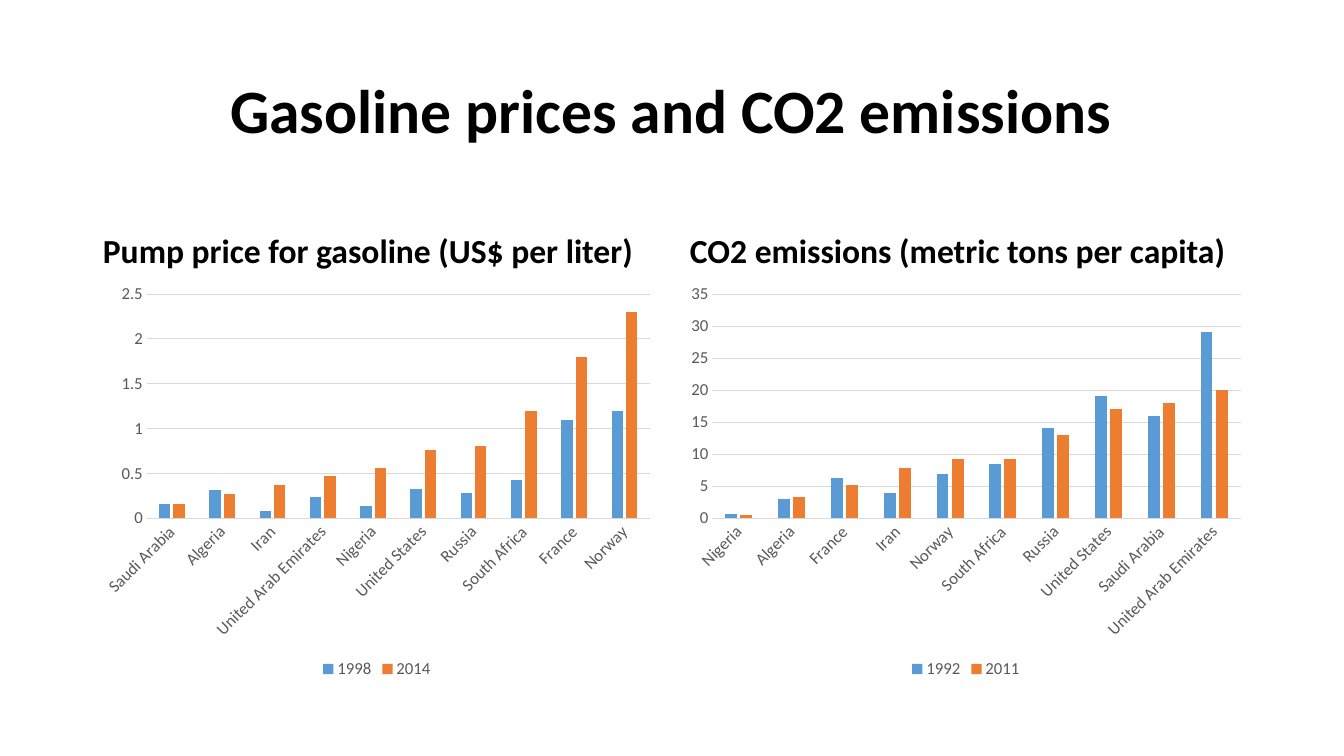
from pptx import Presentation
from pptx.chart.data import CategoryChartData
from pptx.dml.color import RGBColor
from pptx.enum.chart import XL_CHART_TYPE, XL_LEGEND_POSITION, XL_TICK_MARK
from pptx.enum.text import MSO_ANCHOR, PP_ALIGN
from pptx.oxml.ns import qn
from pptx.util import Emu, Pt

COLUMNS = XL_CHART_TYPE.COLUMN_CLUSTERED
LEGEND_BOTTOM = XL_LEGEND_POSITION.BOTTOM
NO_TICK = XL_TICK_MARK.NONE
MIDDLE, BOTTOM = MSO_ANCHOR.MIDDLE, MSO_ANCHOR.BOTTOM
LEFT, CENTER = PP_ALIGN.LEFT, PP_ALIGN.CENTER

FONT = "Calibri"
COLORS = {"text": "000000", "label": "595959", "grid": "D9D9D9",
          "earlier": "5B9BD5", "later": "ED7D31"}

TITLE = "Gasoline prices and CO2 emissions"
PANELS = [
    {
        "heading": "Pump price for gasoline (US$ per liter)",
        "left": 93, "width": 568, "years": ("1998", "2014"),
        "rows": [
            ("Saudi Arabia", 0.16, 0.16), ("Algeria", 0.31, 0.27),
            ("Iran", 0.08, 0.37), ("United Arab Emirates", 0.23, 0.47),
            ("Nigeria", 0.13, 0.56), ("United States", 0.32, 0.76),
            ("Russia", 0.28, 0.81), ("South Africa", 0.43, 1.2),
            ("France", 1.1, 1.8), ("Norway", 1.2, 2.3),
        ],
        "maximum": 2.5, "step": 0.5,
    },
    {
        "heading": "CO2 emissions (metric tons per capita)",
        "left": 680, "width": 572, "years": ("1992", "2011"),
        "rows": [
            ("Nigeria", 0.6, 0.5), ("Algeria", 3, 3.3),
            ("France", 6.2, 5.2), ("Iran", 3.9, 7.8),
            ("Norway", 6.9, 9.2), ("South Africa", 8.4, 9.3),
            ("Russia", 14, 13), ("United States", 19, 17),
            ("Saudi Arabia", 16, 18), ("United Arab Emirates", 29, 20),
        ],
        "maximum": 35, "step": 5,
    },
]

PAGE_SIZE = (1344, 756)
TITLE_AREA = (92, 41, 1159, 146)
HEADING_TOP, HEADING_HEIGHT = 185, 91
CHART_TOP, CHART_HEIGHT = HEADING_TOP + HEADING_HEIGHT, 407


def px(length):
    return Emu(round(length * 914400 / 100.8))


def color(name):
    return RGBColor.from_string(COLORS[name])


def set_values(target, values):
    for name, value in values.items():
        setattr(target, name, value)


def style_font(font, size, color_name, bold=False):
    set_values(font, {"name": FONT, "size": Pt(size), "bold": bold})
    font.color.rgb = color(color_name)


def style_line(line):
    line.width = Pt(0.75)
    line.color.rgb = color("grid")


def add_text(page, area, text, size, anchor, align, space_before=0):
    box = page.shapes.add_textbox(*map(px, area))
    set_values(box.text_frame, {"word_wrap": True, "vertical_anchor": anchor})
    para = box.text_frame.paragraphs[0]
    set_values(para, {"alignment": align, "line_spacing": 0.9,
                      "space_before": Pt(space_before)})
    span = para.add_run()
    span.text = text
    style_font(span.font, size, "text", bold=True)


def style_axes(chart, panel):
    for axis in (chart.category_axis, chart.value_axis):
        set_values(axis, {"major_tick_mark": NO_TICK, "minor_tick_mark": NO_TICK})
        style_font(axis.tick_labels.font, 12, "label")
    countries, amounts = chart.category_axis, chart.value_axis
    style_line(countries.format.line)
    label_body = countries._element.find(qn("c:txPr")).find(qn("a:bodyPr"))
    label_body.set("rot", str(-45 * 60000))
    amounts.format.line.fill.background()
    set_values(amounts, {"has_major_gridlines": True, "minimum_scale": 0,
                         "maximum_scale": panel["maximum"],
                         "major_unit": panel["step"]})
    style_line(amounts.major_gridlines.format.line)


def add_column_chart(page, panel):
    countries, *value_lists = zip(*panel["rows"])
    data = CategoryChartData()
    data.categories = countries
    for year, values in zip(panel["years"], value_lists):
        data.add_series(year, values)
    area = (panel["left"], CHART_TOP, panel["width"], CHART_HEIGHT)
    chart = page.shapes.add_chart(COLUMNS, *map(px, area), data).chart
    style_font(chart.font, 10, "text")
    set_values(chart, {"has_title": False, "has_legend": True})
    set_values(chart.legend, {"position": LEGEND_BOTTOM, "include_in_layout": False})
    style_font(chart.legend.font, 12, "label")
    style_axes(chart, panel)
    plot = chart.plots[0]
    set_values(plot, {"gap_width": 219, "overlap": -27, "vary_by_categories": False})
    for series, color_name in zip(plot.series, ("earlier", "later")):
        series.format.fill.solid()
        series.format.fill.fore_color.rgb = color(color_name)


def main():
    deck = Presentation()
    deck.slide_width, deck.slide_height = map(px, PAGE_SIZE)
    page = deck.slides.add_slide(deck.slide_layouts[6])
    add_text(page, TITLE_AREA, TITLE, 44, MIDDLE, CENTER)
    for panel in PANELS:
        area = (panel["left"], HEADING_TOP, panel["width"], HEADING_HEIGHT)
        add_text(page, area, panel["heading"], 24, BOTTOM, LEFT, space_before=10)
        add_column_chart(page, panel)
    deck.save("out.pptx")


if __name__ == "__main__":
    main()
